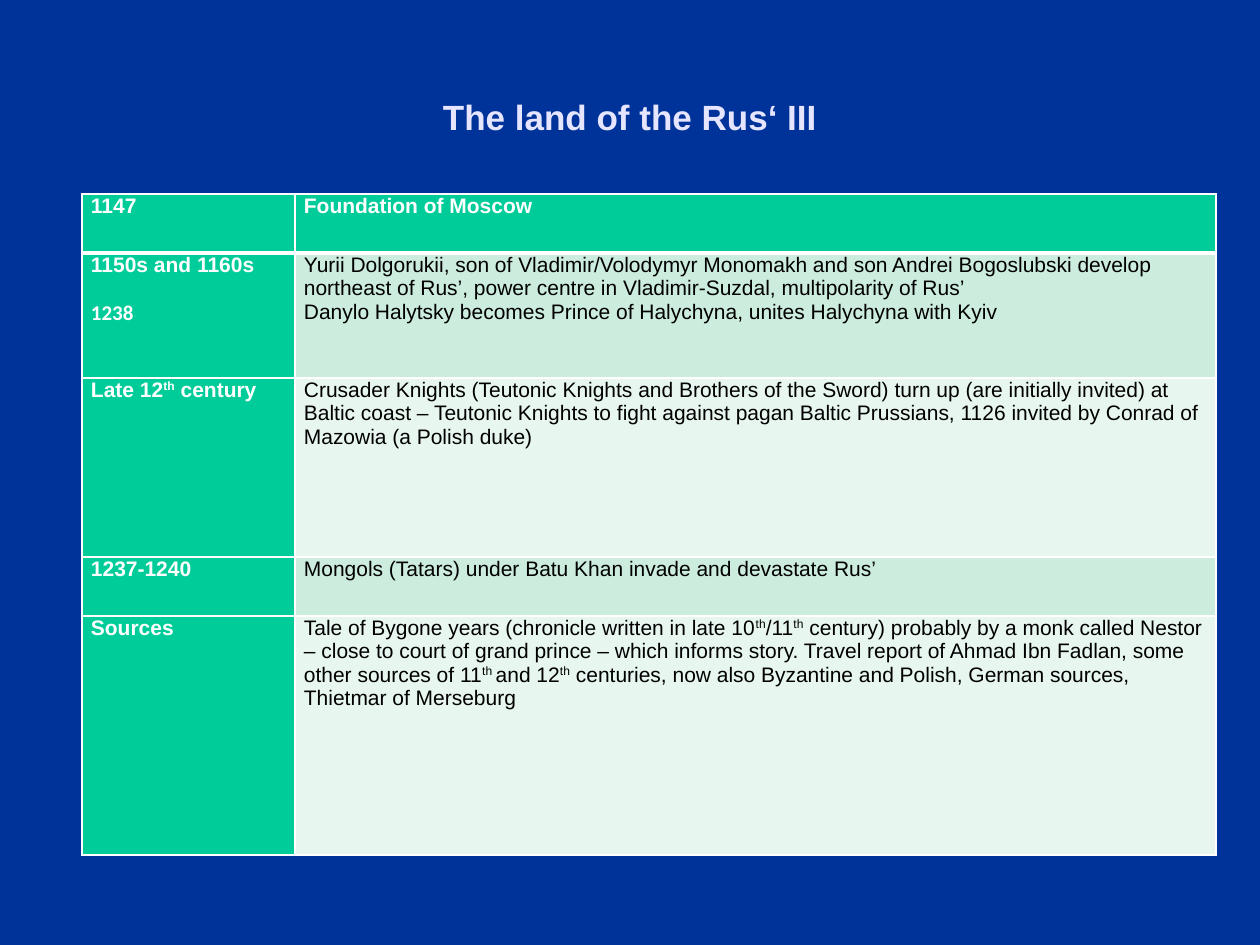
from dataclasses import dataclass

from lxml import etree
from pptx import Presentation
from pptx.dml.color import RGBColor
from pptx.enum.text import MSO_ANCHOR, PP_ALIGN
from pptx.oxml.ns import qn
from pptx.util import Emu, Pt

MIDDLE = MSO_ANCHOR.MIDDLE
CENTER = PP_ALIGN.CENTER
SCALE = 914400 / 126  # EMU in one px

COLORS = {
    "back": "003399",
    "title": "E5E5FF",
    "head": "00CC99",
    "dark": "CCECDE",
    "light": "E7F6EF",
    "white": "FFFFFF",
    "black": "000000",
}
FORMATS = {
    "title": {"name": "Arial", "size": Pt(20), "bold": True},
    "head": {"name": "Arial", "size": Pt(12), "bold": True},
    "late": {"name": "Calibri", "size": Pt(12), "bold": True},
    "body": {"name": "Arial", "size": Pt(12), "bold": False},
}


@dataclass
class Para:
    text: str  # text between carets is raised
    style: str
    ink: str
    gap: int = 0  # points above


@dataclass
class Row:
    height: int
    date: list[Para]
    event: list[Para]


def px(value: int) -> Emu:
    return Emu(round(value * SCALE))


def rgb(name: str) -> RGBColor:
    return RGBColor.from_string(COLORS[name])


def head(text: str) -> Para:
    return Para(text, "head", "white")


def body(text: str) -> Para:
    return Para(text, "body", "black")


ROWS = [
    Row(59, [head("1147")], [head("Foundation of Moscow")]),
    Row(
        125,
        [head("1150s and 1160s"), Para("1238", "late", "white", 14)],
        [
            body("Yurii Dolgorukii, son of Vladimir/Volodymyr Monomakh and son "
                 "Andrei Bogoslubski develop northeast of Rus’, power centre in "
                 "Vladimir-Suzdal, multipolarity of Rus’"),
            body("Danylo Halytsky becomes Prince of Halychyna, "
                 "unites Halychyna with Kyiv"),
        ],
    ),
    Row(
        179,
        [head("Late 12^th^ century")],
        [body("Crusader Knights (Teutonic Knights and Brothers of the Sword) "
              "turn up (are initially invited) at Baltic coast – Teutonic "
              "Knights to fight against pagan Baltic Prussians, 1126 invited "
              "by Conrad of Mazowia (a Polish duke)")],
    ),
    Row(
        59,
        [head("1237-1240")],
        [body("Mongols (Tatars) under Batu Khan invade and devastate Rus’")],
    ),
    Row(
        239,
        [head("Sources")],
        [body("Tale of Bygone years (chronicle written in late 10^th^/11^th^ "
              "century) probably by a monk called Nestor – close to court of "
              "grand prince – which informs story. Travel report of Ahmad Ibn "
              "Fadlan, some other sources of 11^th ^and 12^th^ centuries, now "
              "also Byzantine and Polish, German sources, Thietmar of "
              "Merseburg")],
    ),
]
COLS = [213, 921]


def write(frame, paras: list[Para]) -> None:
    for i, item in enumerate(paras):
        para = frame.add_paragraph() if i else frame.paragraphs[0]
        para.space_before = Pt(item.gap)
        for j, part in enumerate(item.text.split("^")):
            run = para.add_run()
            run.text = part
            for key, value in FORMATS[item.style].items():
                setattr(run.font, key, value)
            run.font.color.rgb = rgb(item.ink)
            if j % 2:
                run._r.get_or_add_rPr().set("baseline", "30000")


def edge(cell, widths: dict[str, int]) -> None:
    props = cell._tc.get_or_add_tcPr()
    for side, width in widths.items():
        line = etree.SubElement(props, qn(f"a:ln{side}"), w=str(Pt(width)))
        fill = etree.SubElement(line, qn("a:solidFill"))
        etree.SubElement(fill, qn("a:srgbClr"), val=COLORS["white"])


def draw_title(slide, text: str) -> None:
    box = slide.shapes.add_textbox(px(63), px(37), px(1134), px(158))
    frame = box.text_frame
    frame.word_wrap = True
    frame.vertical_anchor = MIDDLE
    write(frame, [Para(text, "title", "title")])
    frame.paragraphs[0].alignment = CENTER


def draw_table(slide, rows: list[Row], cols: list[int]) -> None:
    tall = sum(row.height for row in rows)
    table = slide.shapes.add_table(
        len(rows), len(cols), px(82), px(194), px(sum(cols)), px(tall)
    ).table
    for col, width in zip(table.columns, cols):
        col.width = px(width)
    for r, row in enumerate(rows):
        table.rows[r].height = px(row.height)
        band = "dark" if r % 2 else "light"
        for c, paras in enumerate((row.date, row.event)):
            cell = table.cell(r, c)
            cell.margin_left = cell.margin_right = px(9)
            cell.margin_top = cell.margin_bottom = 0
            # The header row has a thick rule below it
            edge(cell, {"L": 1, "R": 1, "T": 3 if r == 1 else 1,
                        "B": 3 if r == 0 else 1})
            cell.fill.solid()
            cell.fill.fore_color.rgb = rgb("head" if r == 0 or c == 0 else band)
            write(cell.text_frame, paras)


def main() -> None:
    deck = Presentation()
    deck.slide_width, deck.slide_height = px(1260), px(945)
    slide = deck.slides.add_slide(deck.slide_layouts[6])

    # Background
    back = slide.background.fill
    back.solid()
    back.fore_color.rgb = rgb("back")

    # Title and timeline
    draw_title(slide, "The land of the Rus‘ III")
    draw_table(slide, ROWS, COLS)
    deck.save("out.pptx")


if __name__ == "__main__":
    main()
